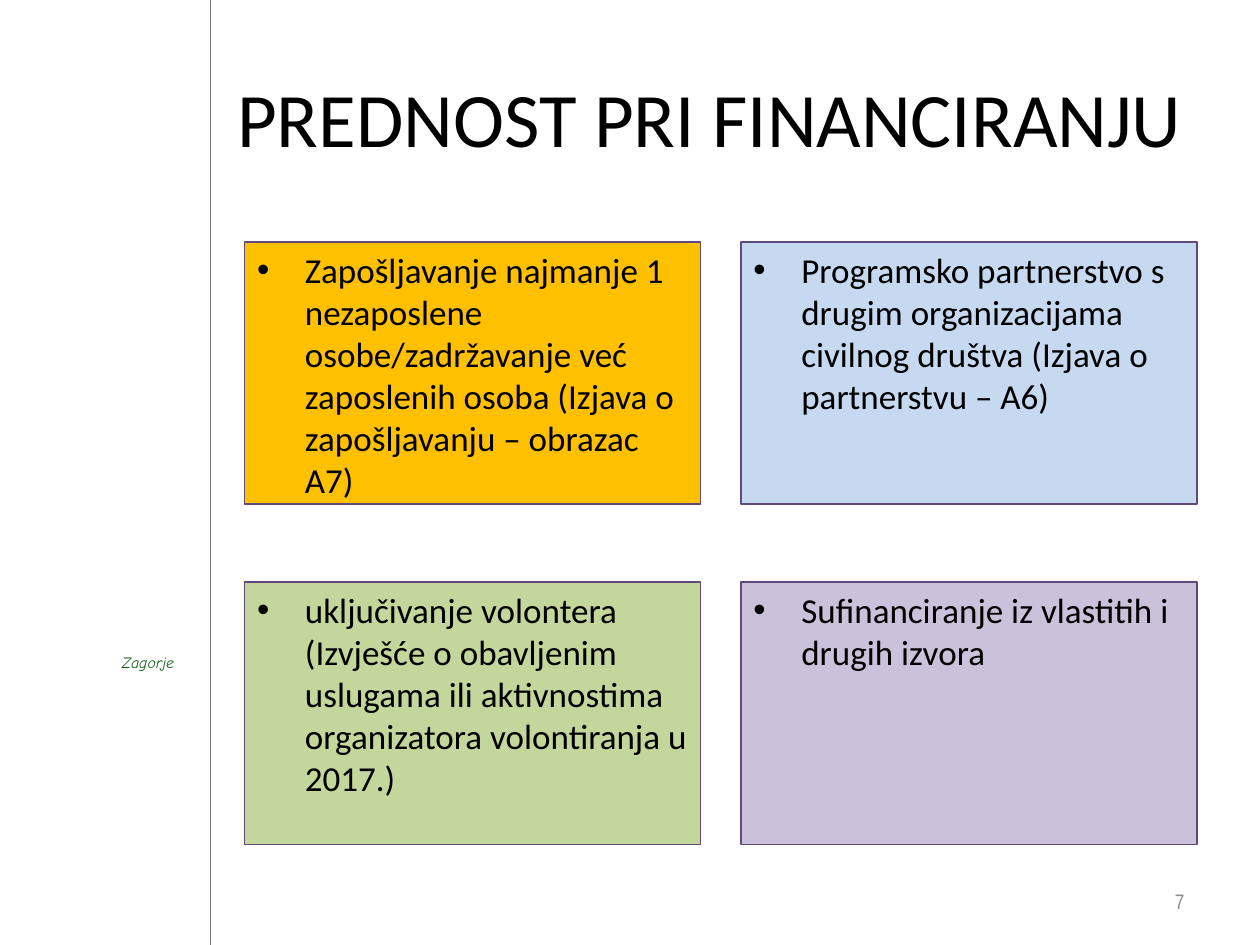
import dataclasses

import pptx
import pptx.dml.color
import pptx.enum.shapes
import pptx.enum.text
import pptx.oxml
import pptx.oxml.ns
import pptx.util

ALIGN = pptx.enum.text.PP_ALIGN
ANCHOR = pptx.enum.text.MSO_ANCHOR
Inches = pptx.util.Inches
Pt = pptx.util.Pt


@dataclasses.dataclass(frozen=True)
class Style:
    font: str
    size: float
    color: str
    italic: bool = False


@dataclasses.dataclass(frozen=True)
class Theme:
    title: Style = Style("Calibri", 44, "000000")
    body: Style = Style("Calibri", 20, "000000")
    region: Style = Style("Comic Neue", 9, "116319", True)
    number: Style = Style("Arial Narrow", 12, "8C8C8C")
    paper: str = "FFFFFF"
    rule: str = "808080"
    card_line: str = "604A7B"
    line_width: float = 0.75


@dataclasses.dataclass(frozen=True)
class Grid:
    left: float = 1.94
    top: float = 1.92
    width: float = 3.62
    height: float = 2.08
    column_step: float = 3.94
    row_step: float = 2.7

    def cell(self, column: int, row: int) -> tuple[float, float, float, float]:
        return (self.left + column * self.column_step,
                self.top + row * self.row_step, self.width, self.height)


@dataclasses.dataclass(frozen=True)
class Card:
    placeholder: int
    column: int
    row: int
    fill: str
    text: str


THEME = Theme()
GRID = Grid()
RULE_X = 1.67
INDENT = Inches(0.38)
CARDS = (
    Card(1, 0, 0, "FFC000", "Zapošljavanje najmanje 1 nezaposlene osobe/zadržavanje "
         "već zaposlenih osoba (Izjava o zapošljavanju – obrazac A7)"),
    Card(2, 1, 0, "C6D9F1", "Programsko partnerstvo s drugim organizacijama "
         "civilnog društva (Izjava o partnerstvu – A6)"),
    Card(3, 0, 1, "C3D69B", "uključivanje volontera (Izvješće o obavljenim uslugama "
         "ili aktivnostima organizatora volontiranja u 2017.)"),
    Card(4, 1, 1, "CCC1DA", "Sufinanciranje iz vlastitih i drugih izvora"),
)


def rgb(value: str) -> pptx.dml.color.RGBColor:
    return pptx.dml.color.RGBColor.from_string(value)


def place(sp, left: float, top: float, width: float, height: float) -> None:
    sp.left, sp.top = Inches(left), Inches(top)
    sp.width, sp.height = Inches(width), Inches(height)


def paint(sp, fill: str, line: str) -> None:
    sp.fill.solid()
    sp.fill.fore_color.rgb = rgb(fill)
    sp.line.color.rgb = rgb(line)
    sp.line.width = Pt(THEME.line_width)


def write(sp, text: str, style: Style, align=ALIGN.LEFT, anchor=ANCHOR.TOP):
    """Fill the shape with one styled paragraph and return it."""
    tf = sp.text_frame
    tf.word_wrap = True
    tf.auto_size = pptx.enum.text.MSO_AUTO_SIZE.NONE
    tf.vertical_anchor = anchor
    p = tf.paragraphs[0]
    p.alignment = align
    p.space_before = Pt(0)
    p.line_spacing = 1.0
    r = p.add_run()
    r.text = text
    r.font.name = style.font
    r.font.size = Pt(style.size)
    r.font.bold = False
    r.font.italic = style.italic
    r.font.color.rgb = rgb(style.color)
    return p


def add_bullet(p) -> None:
    pPr = p._p.get_or_add_pPr()
    pPr.set("marL", str(INDENT))
    pPr.set("indent", str(-INDENT))
    ns = pptx.oxml.ns.nsdecls("a")
    for xml in (f'<a:buFont {ns} typeface="Arial"/>', f'<a:buChar {ns} char="•"/>'):
        pPr.append(pptx.oxml.parse_xml(xml))


def draw_card(slide, card: Card) -> None:
    sp = slide.placeholders[card.placeholder]
    place(sp, *GRID.cell(card.column, card.row))
    paint(sp, card.fill, THEME.card_line)
    add_bullet(write(sp, card.text, THEME.body))


def draw_sidebar(slide, height: int) -> None:
    rule = slide.shapes.add_connector(pptx.enum.shapes.MSO_CONNECTOR.STRAIGHT,
                                      Inches(RULE_X), 0, Inches(RULE_X), height)
    rule.line.color.rgb = rgb(THEME.rule)
    rule.line.width = Pt(THEME.line_width)
    rule._element.spPr.append(pptx.oxml.parse_xml(
        f'<a:effectLst {pptx.oxml.ns.nsdecls("a")}/>'))
    region = slide.shapes.add_shape(pptx.enum.shapes.MSO_SHAPE.RECTANGLE, 0, 0, 0, 0)
    place(region, 0.87, 5.13, 0.76, 0.39)
    region.shadow.inherit = False
    paint(region, THEME.paper, THEME.paper)
    write(region, "Zagorje", THEME.region)


def main() -> None:
    prs = pptx.Presentation()
    prs.slide_width, prs.slide_height = Inches(10), Inches(7.5)
    slide = prs.slides.add_slide(prs.slide_layouts.get_by_name("Comparison"))
    draw_sidebar(slide, prs.slide_height)
    title = slide.shapes.title
    place(title, 1.77, 0.3, 7.73, 1.25)
    write(title, "PREDNOST PRI FINANCIRANJU", THEME.title, ALIGN.CENTER, ANCHOR.MIDDLE)
    for card in CARDS:
        draw_card(slide, card)
    number = slide.shapes.add_textbox(0, 0, 0, 0)
    place(number, 7.17, 6.95, 2.33, 0.4)
    write(number, "7", THEME.number, ALIGN.RIGHT, ANCHOR.MIDDLE)
    prs.save("out.pptx")


if __name__ == "__main__":
    main()
